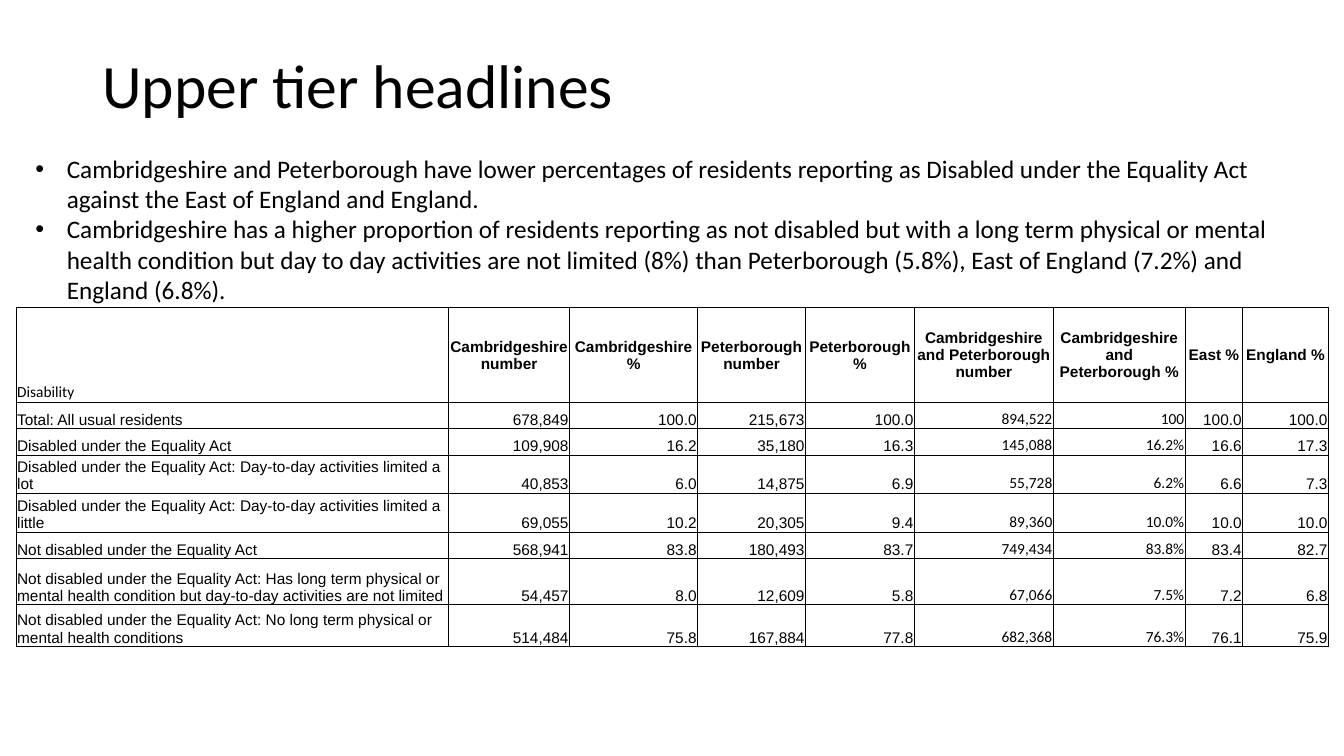
"""Build the slide of upper tier disability headlines with its census table."""
import pptx
import pptx.dml.color
import pptx.enum.text
import pptx.oxml
import pptx.oxml.ns
import pptx.util

HEADLINE = "Upper tier headlines"
FINDINGS = [
    "Cambridgeshire and Peterborough have lower percentages of residents reporting as Disabled under the Equality Act against the East of England and England.",
    "Cambridgeshire has a higher proportion of residents reporting as not disabled but with a long term physical or mental health condition but day to day activities are not limited (8%) than Peterborough (5.8%), East of England (7.2%) and England (6.8%).",
]
CENSUS = [
    ("Disability", "Cambridgeshire number", "Cambridgeshire %", "Peterborough number", "Peterborough %",
     "Cambridgeshire and Peterborough number", "Cambridgeshire and Peterborough %", "East %", "England %"),
    ("Total: All usual residents",
     "678,849", "100.0", "215,673", "100.0", "894,522", "100", "100.0", "100.0"),
    ("Disabled under the Equality Act",
     "109,908", "16.2", "35,180", "16.3", "145,088", "16.2%", "16.6", "17.3"),
    ("Disabled under the Equality Act: Day-to-day activities limited a lot",
     "40,853", "6.0", "14,875", "6.9", "55,728", "6.2%", "6.6", "7.3"),
    ("Disabled under the Equality Act: Day-to-day activities limited a little",
     "69,055", "10.2", "20,305", "9.4", "89,360", "10.0%", "10.0", "10.0"),
    ("Not disabled under the Equality Act",
     "568,941", "83.8", "180,493", "83.7", "749,434", "83.8%", "83.4", "82.7"),
    ("Not disabled under the Equality Act: Has long term physical or mental health condition but day-to-day activities are not limited",
     "54,457", "8.0", "12,609", "5.8", "67,066", "7.5%", "7.2", "6.8"),
    ("Not disabled under the Equality Act: No long term physical or mental health conditions",
     "514,484", "75.8", "167,884", "77.8", "682,368", "76.3%", "76.1", "75.9"),
]

THEME = {
    "ink": "000000", "text": "Calibri", "figures": "Arial",
    "headline": 44, "finding": 18, "cell": 11, "thin": 0.5, "thick": 1,
}

GRID = pptx.util.Inches(1) / 12
HEADLINE_AREA = (11, 1.5, 91, 18)
FINDINGS_AREA = (3, 17.64, 155, 23)
CENSUS_CORNER = (1.92, 36.6)
COLUMNS = [51.5, 14.4, 15.25, 12.85, 12.95, 16.55, 15.7, 6.85, 10.2]
ROWS = [11.28, 3.15, 3.15, 3.15, 4.65, 3.15, 5.5, 4.95]
HANGING = 3.75
THICK_AFTER = {0, 2, 4, 7, 8}
COMBINED_AREA = {5, 6}

ALIGN = pptx.enum.text.PP_ALIGN
ANCHOR = pptx.enum.text.MSO_ANCHOR
FIT = pptx.enum.text.MSO_AUTO_SIZE


def grid(units):
    return pptx.util.Emu(round(units * GRID))


def assign(target, values):
    for name, value in values.items():
        setattr(target, name, value)


def style(font, face, size, bold=False):
    assign(font, {"name": face, "size": pptx.util.Pt(size), "bold": bold})
    font.color.rgb = pptx.dml.color.RGBColor.from_string(THEME["ink"])


def place(holder, area):
    assign(holder, dict(zip(("left", "top", "width", "height"), map(grid, area))))


def rule_cell(cell, widths):
    namespace = pptx.oxml.ns.nsdecls("a")
    for side, width in widths.items():
        cell._tc.get_or_add_tcPr().append(pptx.oxml.parse_xml(
            f'<a:ln{side} {namespace} w="{pptx.util.Pt(width)}"><a:solidFill>'
            f'<a:srgbClr val="{THEME["ink"]}"/></a:solidFill></a:ln{side}>'))


def write_headline(slide):
    headline = slide.shapes.title
    place(headline, HEADLINE_AREA)
    headline.text = HEADLINE
    assign(headline.text_frame, {"vertical_anchor": ANCHOR.MIDDLE, "auto_size": FIT.NONE})
    line = headline.text_frame.paragraphs[0]
    assign(line, {"alignment": ALIGN.LEFT, "line_spacing": 0.9})
    style(line.runs[0].font, THEME["text"], THEME["headline"])


def write_findings(slide):
    findings = slide.placeholders[1]
    place(findings, FINDINGS_AREA)
    findings.text = "\n".join(FINDINGS)
    findings.text_frame.auto_size = FIT.SHAPE_TO_FIT_TEXT
    for finding in findings.text_frame.paragraphs:
        finding.space_before = pptx.util.Pt(0)
        layout = finding._p.get_or_add_pPr()
        layout.set("marL", str(grid(HANGING)))
        layout.set("indent", str(-grid(HANGING)))
        for bullet in ('buFont {} typeface="Arial"', 'buChar {} char="•"'):
            layout.append(pptx.oxml.parse_xml(
                f'<a:{bullet.format(pptx.oxml.ns.nsdecls("a"))}/>'))
        style(finding.runs[0].font, THEME["text"], THEME["finding"])


def write_cell(cell, row, column):
    header, label = row == 0, column == 0
    edge = {True: THEME["thick"], False: THEME["thin"]}
    rule_cell(cell, {
        "L": edge[column - 1 in THICK_AFTER],
        "R": edge[column in THICK_AFTER],
        "T": THEME["thin"],
        "B": edge[row == len(CENSUS) - 1 and not label],
    })
    cell.fill.background()
    inset = pptx.util.Inches(0.01)
    assign(cell, {
        "text": CENSUS[row][column],
        "vertical_anchor": ANCHOR.MIDDLE if header and not label else ANCHOR.BOTTOM,
        "margin_left": inset, "margin_top": inset, "margin_right": inset, "margin_bottom": 0,
    })
    entry = cell.text_frame.paragraphs[0]
    entry.alignment = ALIGN.LEFT if label else ALIGN.CENTER if header else ALIGN.RIGHT
    plain = label if header else column in COMBINED_AREA
    style(entry.runs[0].font, THEME["text" if plain else "figures"], THEME["cell"],
          header and not label)


def write_census(slide):
    extent = (sum(COLUMNS), sum(ROWS))
    census = slide.shapes.add_table(
        len(ROWS), len(COLUMNS), *map(grid, CENSUS_CORNER + extent)).table
    assign(census, {"first_row": False, "horz_banding": False})
    for column, width in zip(census.columns, COLUMNS):
        column.width = grid(width)
    for row, height in enumerate(ROWS):
        census.rows[row].height = grid(height)
        for column in range(len(COLUMNS)):
            write_cell(census.cell(row, column), row, column)


def main():
    deck = pptx.Presentation()
    assign(deck, {"slide_width": grid(160), "slide_height": grid(90)})
    slide = deck.slides.add_slide(deck.slide_layouts[1])
    write_headline(slide)
    write_findings(slide)
    write_census(slide)
    deck.save("out.pptx")


if __name__ == "__main__":
    main()
